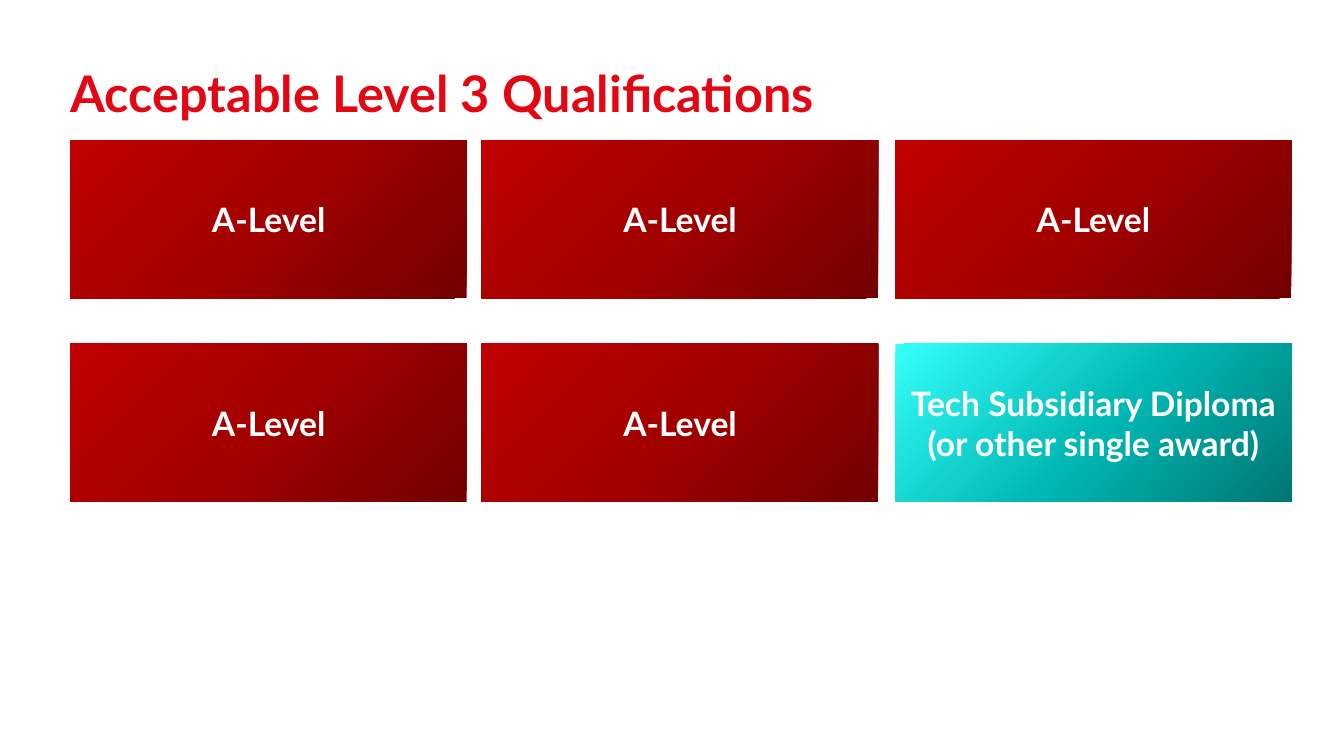
import dataclasses

import pptx
import pptx.dml.color
import pptx.enum.shapes
import pptx.enum.text
import pptx.oxml.ns
import pptx.oxml.xmlchemy
import pptx.slide
import pptx.text.text
import pptx.util
from lxml import etree

RGB = pptx.dml.color.RGBColor
RED = RGB(0xE3, 0x06, 0x13)
WHITE = RGB(0xFF, 0xFF, 0xFF)
# Gradient stops: percent and colour
REDS = ((0, RGB(0x72, 0, 0)), (50, RGB(0xA2, 0, 0)), (100, RGB(0xC0, 0, 0)))
TEALS = ((0, RGB(0, 0x75, 0x73)), (48, RGB(0, 0xB9, 0xB5)), (100, RGB(0x36, 0xFF, 0xFA)))

FONT = "Lato"
WIDE, HIGH = 13.33, 7.5
# Grid of cards, in inches
COLS = (0.7, 4.78, 8.88)
ROWS = (1.39, 3.41)
CARD_W, CARD_H = 3.93, 1.57


@dataclasses.dataclass(frozen=True)
class Card:
    col: int
    row: int
    text: str = "A-Level"
    stops: tuple = REDS
    round: bool = False


CARDS = (
    Card(0, 0), Card(1, 0), Card(2, 0),
    Card(0, 1), Card(1, 1),
    Card(2, 1, "Tech Subsidiary Diploma\v(or other single award)", TEALS, True),
)


def style(frame: pptx.text.text.TextFrame, size: int, color: RGB) -> None:
    """Format every run in the frame."""
    for para in frame.paragraphs:
        for run in para.runs:
            run.font.name = FONT
            run.font.size = pptx.util.Pt(size)
            run.font.bold = True
            run.font.color.rgb = color


def shade(shape, card: Card) -> None:
    """Fill a card from its dark lower right to its bright upper left."""
    qn = pptx.oxml.ns.qn
    shape.fill.gradient()
    grad = shape.fill._xPr.find(qn("a:gradFill"))
    for child in list(grad):
        grad.remove(child)
    stops = etree.SubElement(grad, qn("a:gsLst"))
    for share, color in card.stops:
        stop = etree.SubElement(stops, qn("a:gs"), pos=str(share * 1000))
        etree.SubElement(stop, qn("a:srgbClr"), val=str(color))
    if card.round:
        ring = etree.SubElement(grad, qn("a:path"), path="circle")
        etree.SubElement(ring, qn("a:fillToRect"), l="100000", t="100000")
        etree.SubElement(grad, qn("a:tileRect"), r="-100000", b="-100000")
    else:
        etree.SubElement(grad, qn("a:lin"), ang=str(225 * 60000), scaled="0")


def draw(slide: pptx.slide.Slide, card: Card) -> None:
    """Place one card in its grid cell."""
    inch = pptx.util.Inches
    shape = slide.shapes.add_shape(
        pptx.enum.shapes.MSO_SHAPE.RECTANGLE,
        inch(COLS[card.col]), inch(ROWS[card.row]), inch(CARD_W), inch(CARD_H))
    shape.shadow.inherit = False
    shape.line.fill.background()
    shade(shape, card)
    frame = shape.text_frame
    frame.word_wrap = True
    frame.vertical_anchor = pptx.enum.text.MSO_ANCHOR.MIDDLE
    frame.text = card.text
    frame.paragraphs[0].alignment = pptx.enum.text.PP_ALIGN.CENTER
    style(frame, 24, WHITE)


def head(slide: pptx.slide.Slide, text: str) -> None:
    """Move and format the title."""
    inch = pptx.util.Inches
    title = slide.shapes.title
    title.left, title.top = inch(0.6), inch(0.63)
    title.width, title.height = inch(12.16), inch(1.09)
    frame = title.text_frame
    frame.word_wrap = True
    frame.auto_size = pptx.enum.text.MSO_AUTO_SIZE.NONE
    frame.vertical_anchor = pptx.enum.text.MSO_ANCHOR.TOP
    frame.text = text
    frame.paragraphs[0].alignment = pptx.enum.text.PP_ALIGN.LEFT
    frame.paragraphs[0].line_spacing = 0.9
    style(frame, 36, RED)


def main() -> None:
    deck = pptx.Presentation()
    deck.slide_width = pptx.util.Inches(WIDE)
    deck.slide_height = pptx.util.Inches(HIGH)
    slide = deck.slides.add_slide(deck.slide_layouts.get_by_name("Title Only"))
    head(slide, "Acceptable Level 3 Qualifications")
    for card in CARDS:
        draw(slide, card)
    deck.save("out.pptx")


if __name__ == "__main__":
    main()
